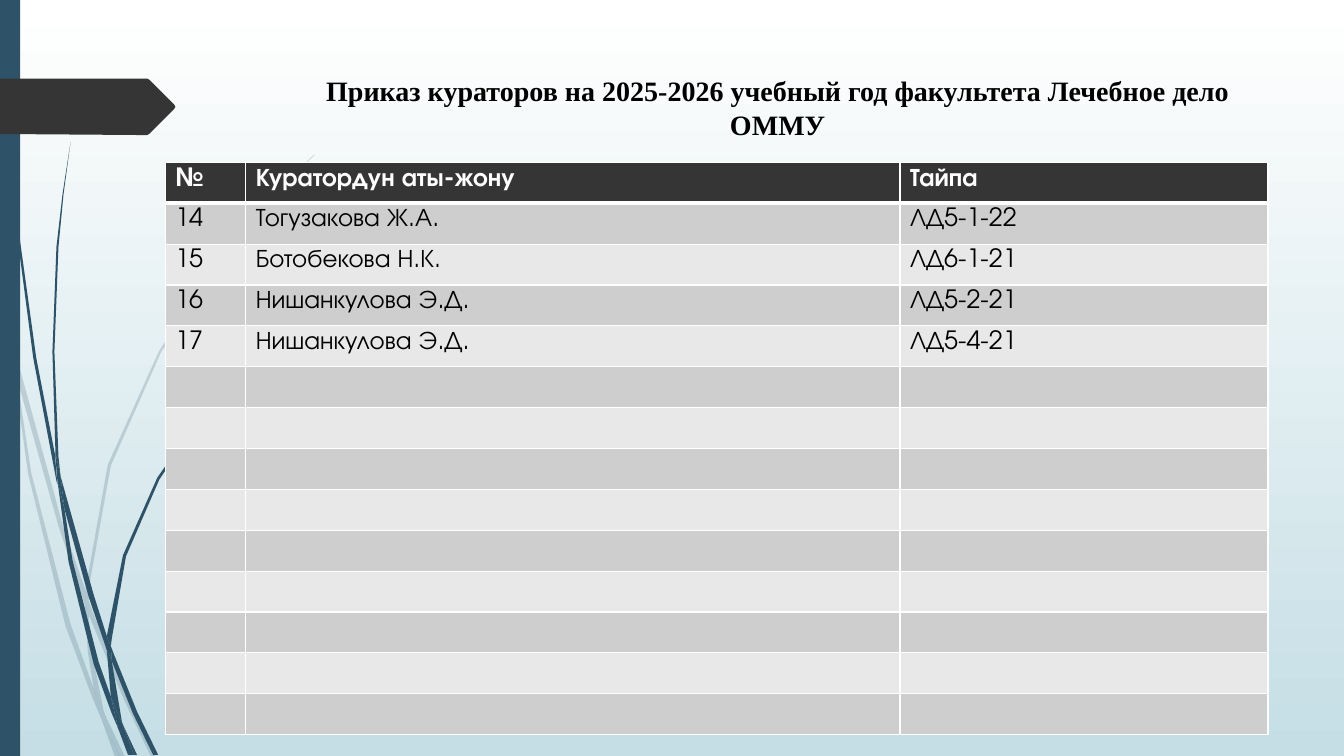
from pptx import Presentation
from pptx.dml.color import RGBColor
from pptx.enum.shapes import MSO_SHAPE
from pptx.enum.text import MSO_ANCHOR, MSO_AUTO_SIZE, PP_ALIGN
from pptx.oxml.ns import qn
from pptx.util import Pt
from lxml import etree

RECT = MSO_SHAPE.RECTANGLE
TOP = MSO_ANCHOR.TOP
CENTER = PP_ALIGN.CENTER
NO_FIT = MSO_AUTO_SIZE.NONE

BLUE, DARK, WHITE, BLACK = "2E5369", "353535", "FFFFFF", "000000"
BANDS = ["CECECE", "E8E8E8"]

# Outlines are x, y pairs on a grid of 0.72 pt
GRID = 0.72
PALE = [
    [(11, 350), (9, 322), (0, 282), (0, 299), (10, 344)],
    [(58, 522), (84, 599), (85, 586), (62, 520), (14, 345), (17, 376)],
    [(92, 607), (88, 596), (88, 610), (123, 694), (150, 751), (155, 751), (127, 692)],
    [(119, 751), (124, 751), (105, 711)],
    [(93, 683), (70, 619), (31, 469), (17, 376), (11, 350), (28, 470), (65, 621),
     (92, 693), (101, 714), (99, 707)],
    [(84, 599), (87, 646), (93, 683), (96, 692), (105, 711), (103, 706), (91, 646),
     (88, 610), (88, 608)],
    [(88, 584), (110, 462), (160, 349), (229, 245), (268, 198), (290, 175), (312, 154),
     (312, 153), (289, 175), (268, 197), (228, 244), (158, 348), (107, 461), (85, 584),
     (85, 586), (88, 596)],
    [(101, 714), (114, 751), (119, 751)],
    [(88, 608), (88, 610), (88, 596), (85, 586), (84, 599)],
    [(96, 692), (93, 683), (99, 707), (101, 714), (119, 751), (105, 711)],
]
DEEP = [
    [(7, 110), (17, 233), (33, 355), (56, 477), (57, 481), (55, 457), (55, 453),
     (36, 355), (19, 232), (8, 109), (5, 48), (4, 0), (3, 0), (4, 48)],
    [(88, 592), (106, 645), (106, 633), (106, 631), (93, 590), (60, 472), (64, 505)],
    [(113, 649), (110, 641), (111, 656), (132, 708), (152, 749), (157, 749), (136, 706)],
    [(110, 691), (98, 657), (72, 556), (64, 505), (57, 477), (68, 557), (93, 659),
     (111, 708), (117, 722), (116, 717)],
    [(60, 472), (58, 453), (54, 349), (58, 245), (63, 193), (70, 141), (62, 193),
     (56, 245), (52, 349), (55, 449)],
    [(133, 749), (136, 749), (122, 719)],
    [(57, 477), (64, 505), (60, 472), (55, 449), (55, 453)],
    [(111, 633), (125, 552), (158, 476), (205, 406), (231, 374), (245, 359), (261, 344),
     (260, 344), (245, 358), (231, 373), (204, 405), (156, 474), (122, 551), (106, 631),
     (110, 641)],
    [(117, 722), (127, 749), (131, 749)],
    [(106, 645), (110, 691), (116, 706), (122, 719), (121, 716), (111, 656), (109, 651)],
    [(106, 645), (109, 651), (111, 656), (110, 641), (106, 631), (106, 633)],
    [(116, 706), (110, 691), (116, 717), (117, 722), (130, 749), (133, 749), (122, 719)],
]
ARROW = [(173, 108), (148, 133), (146, 134), (136, 134), (0, 133), (0, 78),
         (146, 78), (148, 79), (173, 104), (174, 106)]

HEAD = ["№", "Куратордун аты-жону", "Тайпа"]
STAFF = [
    ["14", "Тогузакова Ж.А.", "ЛД5-1-22"],
    ["15", "Ботобекова Н.К.", "ЛД6-1-21"],
    ["16", "Нишанкулова Э.Д.", "ЛД5-2-21"],
    ["17", "Нишанкулова Э.Д.", "ЛД5-4-21"],
]
SPARE = 9


def rgb(code):
    return RGBColor.from_string(code)


class Deck:
    font = "TeX Gyre Adventor"
    serif = "Times New Roman"

    def __init__(self, wide, high):
        self.prs = Presentation()
        self.prs.slide_width, self.prs.slide_height = Pt(wide), Pt(high)
        self.slide = self.prs.slides.add_slide(self.prs.slide_layouts[5])
        self.shapes = self.slide.shapes

    def back(self, *codes):
        fill = self.slide.background.fill
        fill.gradient()
        fill.gradient_angle = 270
        for stop, code in zip(fill.gradient_stops, codes):
            stop.color.rgb = rgb(code)

    def paint(self, shape, code, alpha=100):
        shape.shadow.inherit = False
        shape.line.fill.background()
        shape.fill.solid()
        shape.fill.fore_color.rgb = rgb(code)
        if alpha < 100:
            tone = shape.fill._xPr.find(".//" + qn("a:srgbClr"))
            etree.SubElement(tone, qn("a:alpha"), val=str(alpha * 1000))

    def rect(self, x, y, w, h, code):
        self.paint(self.shapes.add_shape(RECT, Pt(x), Pt(y), Pt(w), Pt(h)), code)

    def shape(self, dots, code, alpha=100):
        pen = self.shapes.build_freeform(*dots[0], scale=Pt(GRID))
        pen.add_line_segments(dots[1:], close=True)
        self.paint(pen.convert_to_shape(), code, alpha)

    def style(self, para, name, size, code, bold):
        font = para.font
        font.name, font.size, font.bold = name, Pt(size), bold
        font.color.rgb = rgb(code)

    def title(self, text, x, y, w, h):
        box = self.shapes.title
        box.left, box.top, box.width, box.height = Pt(x), Pt(y), Pt(w), Pt(h)
        frame = box.text_frame
        frame.text = text
        frame.word_wrap, frame.auto_size = True, NO_FIT
        frame.vertical_anchor = TOP
        para = frame.paragraphs[0]
        para.alignment = CENTER
        self.style(para, self.serif, 20, BLACK, True)

    def edge(self, cell, side, width):
        line = etree.SubElement(cell._tc.get_or_add_tcPr(), qn("a:ln" + side),
                                w=str(Pt(width)))
        fill = etree.SubElement(line, qn("a:solidFill"))
        etree.SubElement(fill, qn("a:srgbClr"), val=WHITE)

    def table(self, rows, x, y, cols, high):
        grid = self.shapes.add_table(len(rows), len(cols), Pt(x), Pt(y),
                                     Pt(sum(cols)), Pt(high * len(rows))).table
        for col, wide in zip(grid.columns, cols):
            col.width = Pt(wide)
        for r, row in enumerate(rows):
            grid.rows[r].height = Pt(high)
            head = r == 0
            for c, text in enumerate(row):
                cell = grid.cell(r, c)
                cell.text = text
                self.style(cell.text_frame.paragraphs[0], self.font, 18,
                           WHITE if head else BLACK, head)
                for side in "LRTB":
                    thick = (r, side) in [(0, "B"), (1, "T")]
                    self.edge(cell, side, 3 if thick else 1)
                cell.fill.solid()
                cell.fill.fore_color.rgb = rgb(DARK if head else BANDS[(r - 1) % 2])


def main():
    deck = Deck(960, 540)
    deck.back(WHITE, "C5DEE5")

    # Grass blades, side bar and arrow
    for dots in PALE:
        deck.shape(dots, BLUE, 20)
    for dots in DEEP:
        deck.shape(dots, BLUE)
    deck.rect(0, 0, 14.4, 540, BLUE)
    deck.shape(ARROW, DARK)

    # Title
    deck.title("Приказ кураторов на 2025-2026 учебный год факультета Лечебное дело ОММУ",
               204.5, 49, 702, 77.8)

    # Table of curators
    rows = [HEAD] + STAFF + [[""] * len(HEAD)] * SPARE
    deck.table(rows, 118, 116, [57.6, 467.3, 262.8], 29.2)

    deck.prs.save("out.pptx")


if __name__ == "__main__":
    main()
